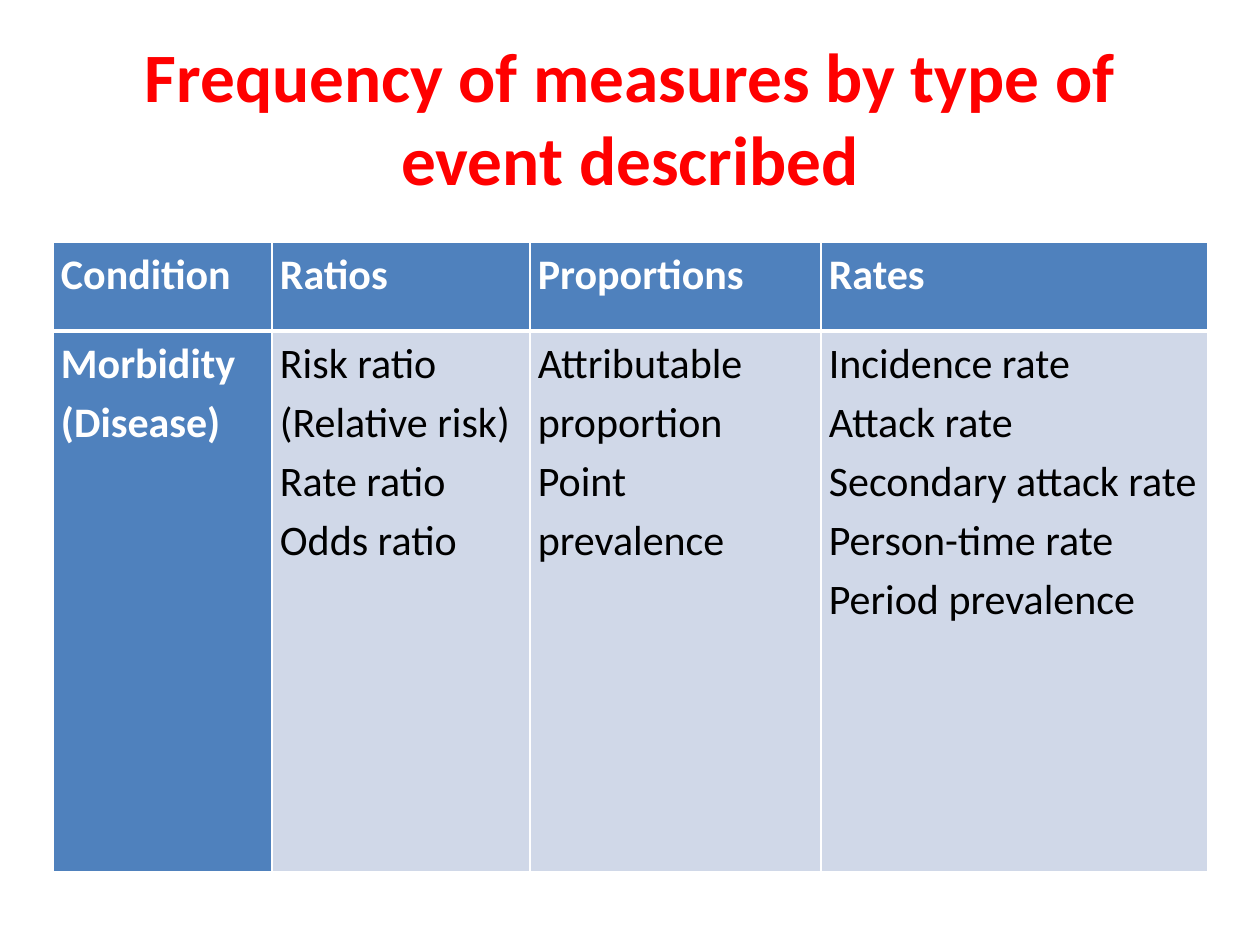
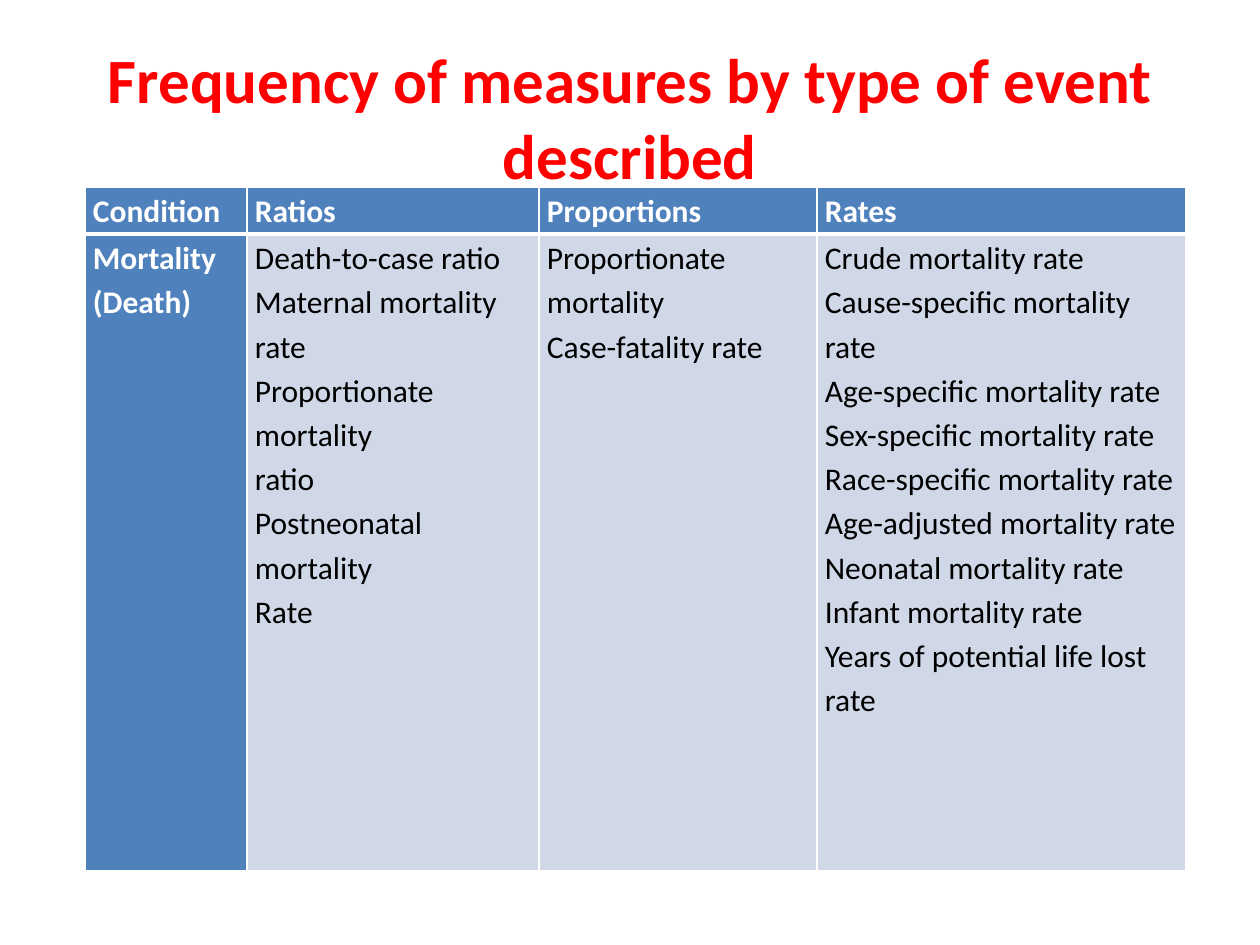
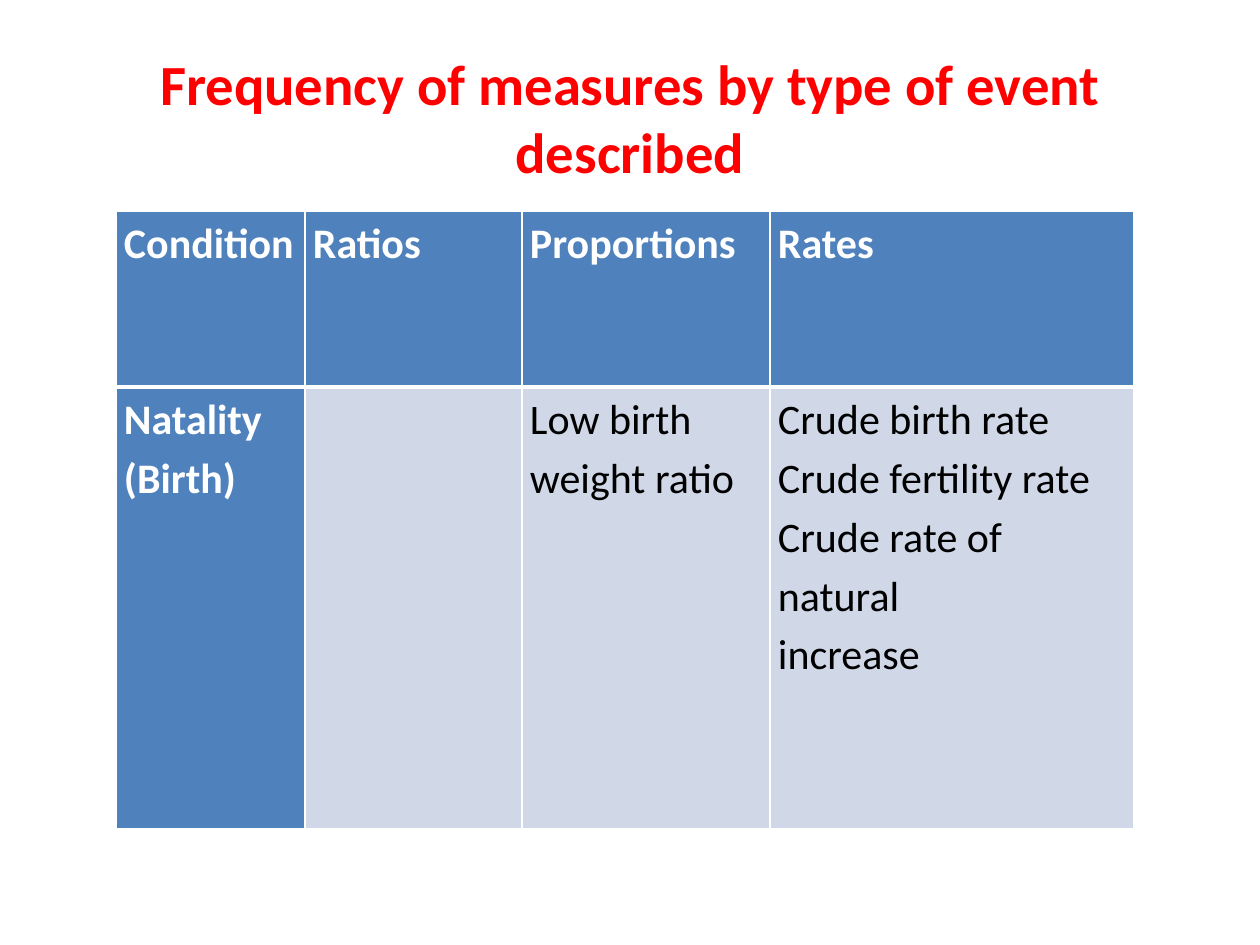
from lxml import etree
from pptx import Presentation
from pptx.dml.color import RGBColor
from pptx.enum.text import MSO_ANCHOR, MSO_AUTO_SIZE, PP_ALIGN
from pptx.oxml.ns import qn
from pptx.util import Emu, Pt

CENTER = PP_ALIGN.CENTER
MIDDLE = MSO_ANCHOR.MIDDLE
NO_FIT = MSO_AUTO_SIZE.NONE
TITLE_ONLY = 5

PX_PER_INCH = 126
FONT = "Calibri"
COLORS = {
    "title": "FF0000",
    "head": "4F81BD",
    "body": "D0D8E8",
    "head_text": "FFFFFF",
    "body_text": "000000",
    "border": "FFFFFF",
}
TITLE = "Frequency of measures by type of event described"
TITLE_BOX = (63, 38, 1134, 157)
HEADINGS = ["Condition", "Ratios", "Proportions", "Rates"]
CELL_MARGIN = 8
LINE_SPACING = 1.15
THIN, THICK = 1, 3

SLIDES = [
    {
        "title_size": 39.6, "text_size": 24, "origin": (53, 242),
        "widths": [219, 258, 291, 387], "heights": [89, 541],
        "measures": [
            ["Morbidity", "(Disease)"],
            ["Risk ratio", "(Relative risk)", "Rate ratio", "Odds ratio"],
            ["Attributable", "proportion", "Point prevalence"],
            ["Incidence rate", "Attack rate", "Secondary attack rate",
             "Person-time rate", "Period prevalence"],
        ],
    },
    {
        "title_size": 36, "text_size": 18, "origin": (85, 187),
        "widths": [162, 292, 278, 369], "heights": [47, 637],
        "measures": [
            ["Mortality", "(Death)"],
            ["Death-to-case ratio", "Maternal mortality rate",
             "Proportionate mortality", "ratio", "Postneonatal mortality", "Rate"],
            ["Proportionate", "mortality", "Case-fatality rate"],
            ["Crude mortality rate", "Cause-specific mortality", "rate",
             "Age-specific mortality rate", "Sex-specific mortality rate",
             "Race-specific mortality rate", "Age-adjusted mortality rate",
             "Neonatal mortality rate", "Infant mortality rate",
             "Years of potential life lost", "rate"],
        ],
    },
    {
        "title_size": 32.4, "text_size": 24, "origin": (116, 211),
        "widths": [189, 217, 248, 364], "heights": [176, 442],
        "measures": [
            ["Natality", "(Birth)"],
            [],
            ["Low birth weight ratio"],
            ["Crude birth rate", "Crude fertility rate",
             "Crude rate of natural", "increase"],
        ],
    },
]


def px(n):
    """Turn a length in px into EMU."""
    return Emu(round(n * 914400 / PX_PER_INCH))


def rgb(name):
    """Look up a named colour."""
    return RGBColor.from_string(COLORS[name])


def style_font(p, size, color, bold):
    """Set the font of a whole paragraph."""
    p.font.name = FONT
    p.font.size = Pt(size)
    p.font.bold = bold
    p.font.color.rgb = rgb(color)


def add_title(s, box, size):
    """Place and format the slide title in the given box."""
    sp = s.shapes.title
    sp.left, sp.top, sp.width, sp.height = map(px, box)
    tf = sp.text_frame
    tf.text = TITLE
    tf.word_wrap = True
    tf.auto_size = NO_FIT
    tf.vertical_anchor = MIDDLE
    p = tf.paragraphs[0]
    p.alignment = CENTER
    style_font(p, size, "title", True)


def add_borders(cell, top, bottom):
    """Draw the four sides of a cell, with line widths in points."""
    tc_pr = cell._tc.get_or_add_tcPr()
    for side, width in (("L", THIN), ("R", THIN), ("T", top), ("B", bottom)):
        ln = etree.SubElement(tc_pr, qn(f"a:ln{side}"), w=str(Pt(width)))
        fill = etree.SubElement(ln, qn("a:solidFill"))
        etree.SubElement(fill, qn("a:srgbClr"), val=COLORS["border"])


def fill_cell(cell, lines, size, is_header_row, is_head):
    """Write the lines of one cell and set its borders, fill and margins."""
    add_borders(cell, THIN if is_header_row else THICK,
                THICK if is_header_row else THIN)
    cell.fill.solid()
    cell.fill.fore_color.rgb = rgb("head" if is_head else "body")
    cell.margin_left = cell.margin_right = px(CELL_MARGIN)
    cell.margin_top = cell.margin_bottom = 0
    tf = cell.text_frame
    tf.text = "\n".join(lines)
    for p in tf.paragraphs:
        p.line_spacing = LINE_SPACING
        style_font(p, size, "head_text" if is_head else "body_text", is_head)


def add_measures_table(s, origin, widths, heights, measures, size):
    """Build the table of measures with its top left corner at origin."""
    left, top = origin
    rows = [[[heading] for heading in HEADINGS], measures]
    frame = s.shapes.add_table(len(rows), len(widths), px(left), px(top),
                               px(sum(widths)), px(sum(heights)))
    table = frame.table
    table.first_col = True
    for column, width in zip(table.columns, widths):
        column.width = px(width)
    for i, (height, row) in enumerate(zip(heights, rows)):
        table.rows[i].height = px(height)
        for j, lines in enumerate(row):
            fill_cell(table.cell(i, j), lines, size, i == 0, i == 0 or j == 0)


def add_measures_slide(prs, data):
    """Add one slide with a title and a table of measures."""
    s = prs.slides.add_slide(prs.slide_layouts[TITLE_ONLY])
    add_title(s, TITLE_BOX, data["title_size"])
    add_measures_table(s, data["origin"], data["widths"], data["heights"],
                       data["measures"], data["text_size"])


def main():
    """Build and save the presentation."""
    prs = Presentation()
    prs.slide_width, prs.slide_height = px(1260), px(945)
    for data in SLIDES:
        add_measures_slide(prs, data)
    prs.save("out.pptx")


if __name__ == "__main__":
    main()
